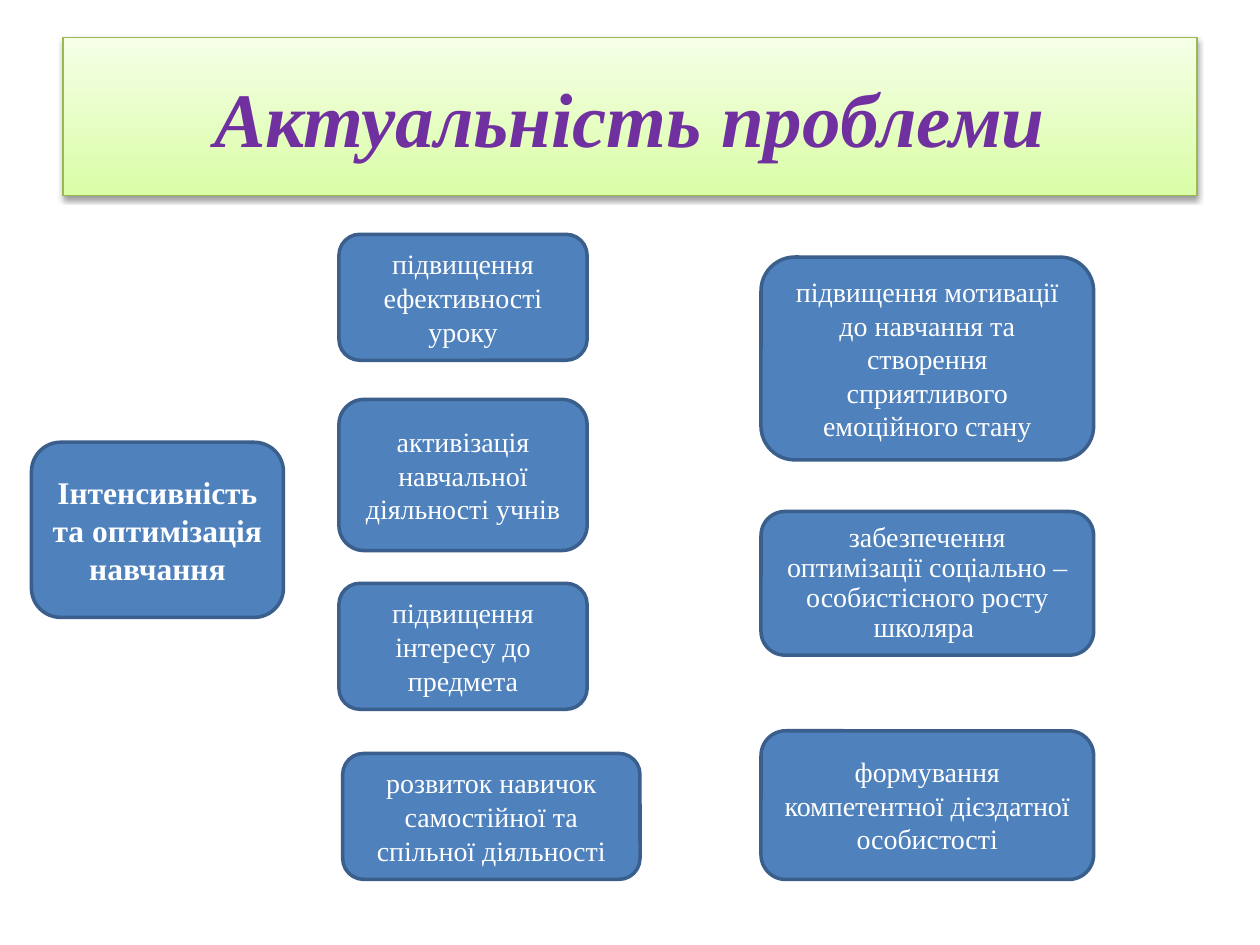
"""Build the slide on the relevance of the problem with its goal boxes."""
from lxml import etree
from pptx import Presentation
from pptx.dml.color import RGBColor
from pptx.enum.shapes import MSO_SHAPE
from pptx.enum.text import MSO_ANCHOR, PP_ALIGN
from pptx.oxml import parse_xml
from pptx.oxml.ns import nsdecls
from pptx.util import Inches, Pt

COLORS = {
    "title": "7030A0",
    "title_top": "F5FFE6",
    "title_bottom": "DAFDA7",
    "title_line": "98B954",
    "box": "4F81BD",
    "box_line": "3A5F8C",
    "text": "FFFFFF",
}


def color(name):
    return RGBColor.from_string(COLORS[name])


def add_box(kind, place, text, size, text_color, line_color, line_width):
    box = page.shapes.add_shape(kind, *[Inches(length) for length in place])
    box.shadow.inherit = False
    box.line.color.rgb = color(line_color)
    box.line.width = Pt(line_width)
    box.text_frame.word_wrap = True
    box.text_frame.vertical_anchor = MSO_ANCHOR.MIDDLE
    para = box.text_frame.paragraphs[0]
    para.text = text
    para.alignment = PP_ALIGN.CENTER
    para.font.name = "Times New Roman"
    para.font.size = Pt(size)
    para.font.color.rgb = color(text_color)
    return box, para


deck = Presentation()
deck.slide_width = Inches(10)
deck.slide_height = Inches(7.5)
page = deck.slides.add_slide(deck.slide_layouts[6])

title, title_para = add_box(MSO_SHAPE.RECTANGLE, (0.5, 0.3, 9, 1.25),
                            "Актуальність проблеми", 44, "title", "title_line", 0.75)
title_para.font.bold = True
title_para.font.italic = True
title.fill.gradient()
title.fill.gradient_angle = 270
for stop, name, position in zip(title.fill.gradient_stops,
                                ("title_top", "title_bottom"), (0, 1)):
    stop.color.rgb = color(name)
    stop.position = position

effects = title.element.spPr.find("{*}effectLst")
effects.append(parse_xml(
    f'<a:outerShdw {nsdecls("a")} blurRad="40000" dist="23000" dir="5400000" rotWithShape="0">'
    '<a:srgbClr val="000000"><a:alpha val="38000"/></a:srgbClr></a:outerShdw>'))

middle_left, middle_width = 2.69, 1.97
right_left, right_width = 6.04, 2.64
goals = [
    (0.25, 3.51, 2, 1.39, "Інтенсивність та оптимізація навчання"),
    (middle_left, 1.86, middle_width, 1, "підвищення ефективності уроку"),
    (middle_left, 3.17, middle_width, 1.2, "активізація навчальної діяльності учнів"),
    (middle_left, 4.63, middle_width, 1, "підвищення інтересу до предмета"),
    (2.72, 5.98, 2.36, 1, "розвиток навичок самостійної та спільної діяльності"),
    (right_left, 4.06, right_width, 1.14,
     "забезпечення оптимізації соціально – особистісного росту школяра "),
    (right_left, 5.8, right_width, 1.18, "формування компетентної дієздатної особистості"),
    (right_left, 2.04, right_width, 1.61,
     "підвищення мотивації до навчання та створення сприятливого емоційного стану"),
]
for *place, text in goals:
    is_main = text.startswith("Інтенсивність")
    box, para = add_box(MSO_SHAPE.ROUNDED_RECTANGLE, place, text,
                        18 if is_main else 16, "text", "box_line", 2)
    box.fill.solid()
    box.fill.fore_color.rgb = color("box")
    if is_main:
        para.font.bold = True
    if text.startswith("забезпечення"):
        para.line_spacing = 0.9
        para.space_after = Pt(5.6)

deck.save("out.pptx")
